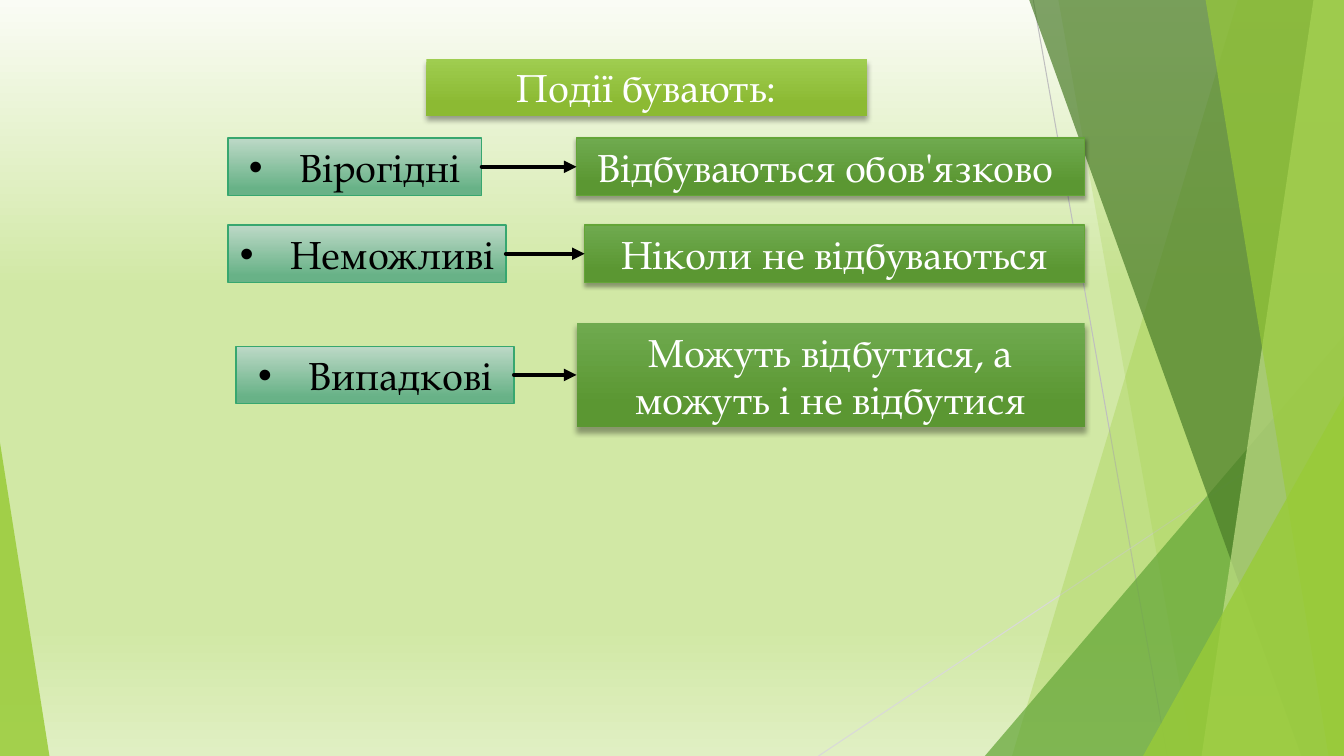
from dataclasses import dataclass

from lxml.etree import SubElement
from pptx import Presentation
from pptx.dml.color import RGBColor
from pptx.enum.shapes import MSO_CONNECTOR as Connector, MSO_SHAPE as Preset
from pptx.enum.text import MSO_ANCHOR as Anchor, MSO_AUTO_SIZE as AutoSize, PP_ALIGN as Align
from pptx.oxml.ns import qn
from pptx.util import Inches, Pt


@dataclass(frozen=True)
class Theme:
    font: str = "TeX Gyre Pagella"
    text_size: int = 28
    light: str = "FFFFFF"
    dark: str = "000000"
    lime: str = "99CB38"
    leaf: str = "63A537"
    forest: str = "4A7C29"
    pale: str = "C2E088"
    mint: str = "37A76F"
    ray_steep: str = "BFBFBF"
    ray_flat: str = "D9D9D9"
    backdrop: tuple = ((0, "FAFCF5"), (38, "D1E8A5"), (83, "D1E8A5"), (100, "E0EFC3"))
    heading_fill: tuple = ((0, "9FCD50"), (78, "8CBA33"))
    kind_fill: tuple = ((0, "BDD9C7"), (88, "68B287"))
    outcome_fill: tuple = ((0, "6FAA4F"), (78, "5B9732"))


def child(parent, tag, **attributes):
    return SubElement(parent, qn(tag), {key: str(value) for key, value in attributes.items()})


def write(shape, text, *, font, size, color, bullet=None):
    frame = shape.text_frame
    frame.word_wrap = True
    frame.auto_size = AutoSize.SHAPE_TO_FIT_TEXT
    frame.vertical_anchor = Anchor.MIDDLE
    paragraph = frame.paragraphs[0]
    paragraph.alignment = Align.CENTER
    if bullet:
        properties = paragraph._p.get_or_add_pPr()
        properties.set("marL", str(Inches(0.5)))
        properties.set("indent", str(-Inches(0.5)))
        child(properties, "a:buFont", typeface="Arial")
        child(properties, "a:buChar", char=bullet)
    run = paragraph.add_run()
    run.text = text
    run.font.name = font
    run.font.size = Pt(size)
    run.font.color.rgb = RGBColor.from_string(color)


class SlideBuilder:
    def __init__(self, deck, theme):
        self.theme = theme
        self.width, self.height = deck.slide_width, deck.slide_height
        self.slide = deck.slides.add_slide(deck.slide_layouts[6])
        self.shapes = self.slide.shapes

    def x(self, percent):
        return round(self.width * percent / 100)

    def y(self, percent):
        return round(self.height * percent / 100)

    def gradient(self, fill, owner, stops):
        fill.gradient()
        fill.gradient_angle = 270
        stop_list = owner.find(".//" + qn("a:gsLst"))
        for old_stop in list(stop_list):
            stop_list.remove(old_stop)
        for position, color in stops:
            stop = child(stop_list, "a:gs", pos=position * 1000)
            child(stop, "a:srgbClr", val=color)

    def background(self, stops):
        self.gradient(self.slide.background.fill, self.slide.element, stops)

    def tint(self, shape, color, opacity):
        shape.shadow.inherit = False
        shape.fill.solid()
        shape.fill.fore_color.rgb = RGBColor.from_string(color)
        shape.line.fill.background()
        swatch = shape.fill._xPr.find(".//" + qn("a:srgbClr"))
        child(swatch, "a:alpha", val=opacity * 1000)

    def facet(self, top_left, bottom_left, color, opacity):
        outline = self.shapes.build_freeform(self.x(top_left), 0)
        corners = ((100, 0), (100, 100), (bottom_left, 100))
        outline.add_line_segments([(self.x(h), self.y(v)) for h, v in corners])
        self.tint(outline.convert_to_shape(), color, opacity)

    def corner(self, left, right, top, apex, color, opacity):
        triangle = self.shapes.add_shape(
            Preset.ISOSCELES_TRIANGLE,
            self.x(left), self.y(top), self.x(right - left), self.y(100 - top))
        triangle.adjustments[0] = apex
        self.tint(triangle, color, opacity)

    def line(self, color, weight, start=(0, 0), end=(0, 0)):
        line = self.shapes.add_connector(
            Connector.STRAIGHT,
            self.x(start[0]), self.y(start[1]), self.x(end[0]), self.y(end[1]))
        line.line.color.rgb = RGBColor.from_string(color)
        line.line.width = Pt(weight)
        child(line._element.spPr, "a:effectLst")
        return line

    def arrow(self, source, target):
        arrow = self.line(self.theme.dark, 3)
        arrow.begin_connect(source, 3)
        arrow.end_connect(target, 1)
        stroke = arrow.line._get_or_add_ln()
        stroke.set("cap", "rnd")
        child(stroke, "a:tailEnd", type="triangle")

    def box(self, text, left, right, middle, height, fill,
            color, border=None, shadow=None, bullet=None):
        box = self.shapes.add_shape(
            Preset.RECTANGLE,
            self.x(left), self.y(middle - height / 2), self.x(right - left), self.y(height))
        box.shadow.inherit = False
        self.gradient(box.fill, box._element.spPr, fill)
        if border:
            box.line.color.rgb = RGBColor.from_string(border)
            box.line.width = Pt(1)
        else:
            box.line.fill.background()
        if shadow:
            blur, distance = shadow
            effects = box._element.spPr.find(qn("a:effectLst"))
            outer = child(effects, "a:outerShdw", blurRad=Pt(blur), dist=Pt(distance),
                          dir=5400000, rotWithShape=0)
            child(child(outer, "a:srgbClr", val=self.theme.dark), "a:alpha", val=35000)
        write(box, text, font=self.theme.font, size=self.theme.text_size,
              color=color, bullet=bullet)
        return box


def main():
    deck = Presentation()
    deck.slide_width, deck.slide_height = Inches(13.33), Inches(7.5)
    theme = Theme()
    page = SlideBuilder(deck, theme)

    page.background(theme.backdrop)
    page.line(theme.ray_steep, 0.75, (76.88, 0), (86.85, 100))
    page.line(theme.ray_flat, 0.75, (100, 53.73), (60.9, 100))
    page.facet(92.1, 75.3, theme.lime, 30)
    page.facet(78.75, 88.73, theme.lime, 20)
    page.corner(73.28, 100, 44.4, 1, theme.leaf, 72)
    page.facet(76.58, 96.83, theme.forest, 70)
    page.facet(97.73, 89.4, theme.pale, 70)
    page.facet(89.7, 98.85, theme.lime, 65)
    page.corner(85.05, 100, 52.4, 1, theme.lime, 80)
    page.corner(0, 3.68, 58.53, 0, theme.lime, 85)

    row_height, tall_row = 7.6, 13.87
    soft, deep = (3, 2), (4, 3)
    outcome_right = 80.7
    page.box("Події бувають:", 31.73, 64.5, 11.55, row_height,
             theme.heading_fill, theme.light, shadow=deep)

    events = (
        ("Вірогідні", 16.95, 35.85, "Відбуваються обов'язково ",
         42.9, 22.07, row_height, theme.leaf, soft),
        ("Неможливі", 16.95, 37.65, "Ніколи не відбуваються",
         43.5, 33.56, row_height, theme.leaf, soft),
        ("Випадкові", 17.55, 38.25, "Можуть відбутися, а можуть і не відбутися",
         42.9, 49.6, tall_row, None, deep),
    )
    for name, left, right, meaning, outcome_left, middle, height, border, shadow in events:
        kind = page.box(name, left, right, middle, row_height, theme.kind_fill,
                        theme.dark, border=theme.mint, bullet="•")
        outcome = page.box(meaning, outcome_left, outcome_right, middle, height,
                           theme.outcome_fill, theme.light, border=border, shadow=shadow)
        page.arrow(kind, outcome)

    deck.save("out.pptx")


if __name__ == "__main__":
    main()
